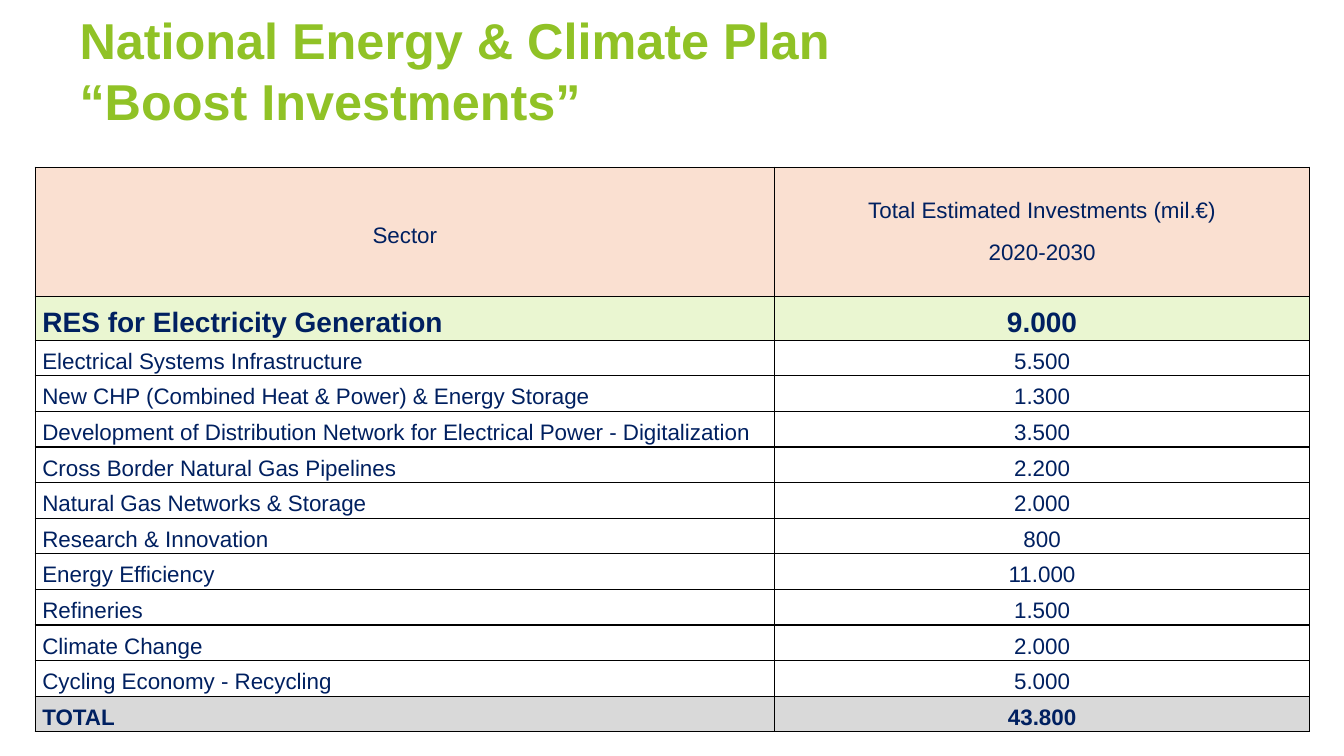
from dataclasses import dataclass

from lxml import etree
from pptx import Presentation
from pptx.dml.color import RGBColor
from pptx.enum.text import MSO_ANCHOR, PP_ALIGN
from pptx.oxml.ns import qn
from pptx.util import Inches, Pt

LEFT, CENTER = PP_ALIGN.LEFT, PP_ALIGN.CENTER
MIDDLE = MSO_ANCHOR.MIDDLE


@dataclass(frozen=True)
class Theme:
    font: str = "Arial"
    title: str = "90C226"
    text: str = "002060"
    border: str = "000000"
    header_fill: str = "FAE0D1"
    highlight_fill: str = "EAF6D1"
    total_fill: str = "D9D9D9"
    title_size: int = 36
    highlight_size: int = 20
    body_size: int = 16


THEME = Theme()

TITLE = "National Energy & Climate Plan\v“Boost Investments”"
HEADER = ("Sector", "Total Estimated Investments (mil.€)\n2020-2030")
HIGHLIGHT = ("RES for Electricity Generation", "9.000")
SECTORS = [
    ("Electrical Systems Infrastructure", "5.500"),
    ("New CHP (Combined Heat & Power) & Energy Storage", "1.300"),
    ("Development of Distribution Network for Electrical Power - Digitalization", "3.500"),
    ("Cross Border Natural Gas Pipelines", "2.200"),
    ("Natural Gas Networks & Storage", "2.000"),
    ("Research & Innovation", "800"),
    ("Energy Efficiency", "11.000"),
    ("Refineries", "1.500"),
    ("Climate Change", "2.000"),
    ("Cycling Economy - Recycling", "5.000"),
]
TOTAL = ("TOTAL", "43.800")


def style_runs(p, size, color, bold):
    for r in p.runs:
        r.font.name = THEME.font
        r.font.size = Pt(size)
        r.font.bold = bold
        r.font.color.rgb = RGBColor.from_string(color)


def add_title(s, left, top, width, height):
    tf = s.shapes.add_textbox(*map(Inches, (left, top, width, height))).text_frame
    tf.word_wrap = True
    tf.vertical_anchor = MIDDLE
    tf.margin_bottom = Inches(0.1)
    tf.text = TITLE
    style_runs(tf.paragraphs[0], THEME.title_size, THEME.title, True)


def add_borders(cell):
    tc_pr = cell._tc.get_or_add_tcPr()
    for i, side in enumerate(("lnL", "lnR", "lnT", "lnB")):
        ln = etree.Element(qn(f"a:{side}"), w=str(Pt(1)))
        fill = etree.SubElement(ln, qn("a:solidFill"))
        etree.SubElement(fill, qn("a:srgbClr"), val=THEME.border)
        tc_pr.insert(i, ln)  # borders come before the fill


def fill_cell(cell, text, align, size, bold, color):
    cell.vertical_anchor = MIDDLE
    cell.margin_left = cell.margin_right = Inches(0.07)
    cell.margin_top = cell.margin_bottom = 0
    if color:
        cell.fill.solid()
        cell.fill.fore_color.rgb = RGBColor.from_string(color)
    else:
        cell.fill.background()
    add_borders(cell)

    cell.text_frame.text = text
    paragraphs = cell.text_frame.paragraphs
    for i, p in enumerate(paragraphs):
        p.alignment = align
        p.line_spacing = 1.3 if len(paragraphs) == 1 else 1.0
        p.space_before = Pt(6 if i else 0)
        p.space_after = Pt(6)
        style_runs(p, size, THEME.text, bold)


def add_investment_table(s, left, top, width, height):
    # Each row: texts, share of height, type size, bold, fill
    body = THEME.body_size
    rows = [(HEADER, 0.23, body, False, THEME.header_fill),
            (HIGHLIGHT, 0.072, THEME.highlight_size, True, THEME.highlight_fill)]
    line = (1 - 0.23 - 0.072) / (len(SECTORS) + 1)
    rows += [(sector, line, body, False, None) for sector in SECTORS]
    rows.append((TOTAL, line, body, True, THEME.total_fill))

    frame = s.shapes.add_table(len(rows), 2, *map(Inches, (left, top, width, height)))
    table = frame.table
    table.first_row = table.horz_banding = False
    for column, share in zip(table.columns, (0.58, 0.42)):
        column.width = Inches(width * share)

    for i, (texts, share, size, bold, color) in enumerate(rows):
        table.rows[i].height = Inches(height * share)
        for j, text in enumerate(texts):
            align = LEFT if i and not j else CENTER
            fill_cell(table.cell(i, j), text, align, size, bold, color)


def main():
    prs = Presentation()
    prs.slide_width, prs.slide_height = Inches(13.33), Inches(7.5)
    s = prs.slides.add_slide(prs.slide_layouts[6])
    add_title(s, 0.69, 0, 9.72, 1.44)
    add_investment_table(s, 0.35, 1.66, 12.64, 5.57)
    prs.save("out.pptx")


if __name__ == "__main__":
    main()
